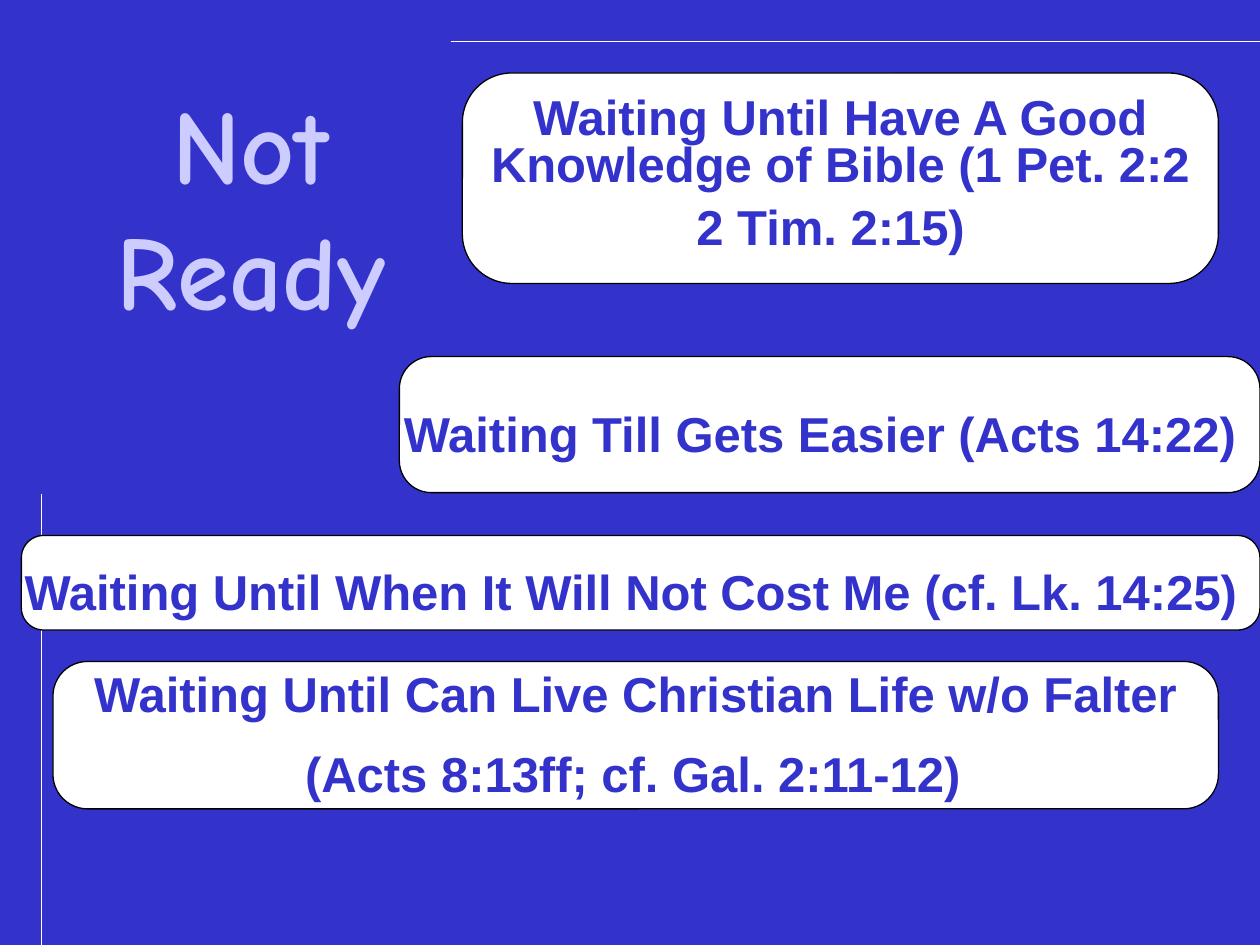
from dataclasses import dataclass

import pptx
import pptx.dml.color
import pptx.enum.shapes
import pptx.enum.text
import pptx.oxml.ns
import pptx.util
from lxml import etree

Inches = pptx.util.Inches


@dataclass(frozen=True)
class Theme:
    background: str = "3333CC"
    panel: str = "FFFFFF"
    outline: str = "000000"
    title: str = "CCCCFF"
    title_font: str = "Comic Neue"
    body_font: str = "Arial"
    title_size: int = 60
    body_size: int = 28
    tail_size: int = 40
    line_width: float = 0.75
    corner: float = 0.235


def color(value):
    return pptx.dml.color.RGBColor.from_string(value)


def add_span(para, text, *, size, font, fill):
    span = para.add_run()
    span.text = text
    span.font.size = pptx.util.Pt(size)
    span.font.name = font
    span.font.bold = True
    span.font.color.rgb = color(fill)


class SlideBuilder:
    def __init__(self, deck, theme):
        self.theme = theme
        self.page = deck.slides.add_slide(deck.slide_layouts[6])
        fill = self.page.background.fill
        fill.solid()
        fill.fore_color.rgb = color(theme.background)

    def style_line(self, line, value):
        line.color.rgb = color(value)
        line.width = pptx.util.Pt(self.theme.line_width)

    def rule(self, x1, y1, x2, y2):
        line = self.page.shapes.add_connector(
            pptx.enum.shapes.MSO_CONNECTOR.STRAIGHT,
            Inches(x1), Inches(y1), Inches(x2), Inches(y2))
        self.style_line(line.line, self.theme.panel)
        properties = line._element.spPr
        etree.SubElement(properties, pptx.oxml.ns.qn("a:effectLst"))

    def add_lines(self, box, lines, spacing=None, **style):
        frame = box.text_frame
        frame.word_wrap = False
        for index, text in enumerate(lines):
            para = frame.add_paragraph() if index else frame.paragraphs[0]
            para.alignment = pptx.enum.text.PP_ALIGN.CENTER
            if spacing:
                para.line_spacing = spacing
            add_span(para, text, **style)
        return para

    def title(self, left, top, width, height, lines):
        theme = self.theme
        box = self.page.shapes.add_textbox(
            Inches(left), Inches(top), Inches(width), Inches(height))
        self.add_lines(box, lines, size=theme.title_size,
                       font=theme.title_font, fill=theme.title)
        box.text_frame.auto_size = pptx.enum.text.MSO_AUTO_SIZE.SHAPE_TO_FIT_TEXT

    def panel(self, left, top, width, height, lines, spacing=None):
        theme = self.theme
        box = self.page.shapes.add_shape(
            pptx.enum.shapes.MSO_SHAPE.ROUNDED_RECTANGLE,
            Inches(left), Inches(top), Inches(width), Inches(height))
        box.adjustments[0] = theme.corner
        box.shadow.inherit = False
        box.fill.solid()
        box.fill.fore_color.rgb = color(theme.panel)
        self.style_line(box.line, theme.outline)
        box.text_frame.vertical_anchor = pptx.enum.text.MSO_ANCHOR.MIDDLE
        style = dict(font=theme.body_font, fill=theme.background)
        para = self.add_lines(box, lines, spacing, size=theme.body_size, **style)
        # The larger closing space sets the height of the last line
        add_span(para, " ", size=theme.tail_size, **style)


def main():
    deck = pptx.Presentation()
    deck.slide_width, deck.slide_height = Inches(10), Inches(7.5)
    slide = SlideBuilder(deck, Theme())

    # Edge rules
    slide.rule(0.33, 3.92, 0.33, 7.5)
    slide.rule(3.58, 0.33, 10, 0.33)

    # Title and reasons for waiting
    slide.panel(3.67, 0.58, 6, 1.67, [
        "Waiting Until Have A Good",
        "Knowledge of Bible (1 Pet. 2:2",
        "2 Tim. 2:15)"], spacing=0.8)
    slide.title(0.67, 0.58, 2.64, 2.12, ["Not", "Ready"])
    slide.panel(3.17, 2.83, 6.83, 1.08,
                ["Waiting Till Gets Easier (Acts 14:22)"])
    slide.panel(0.17, 4.25, 9.83, 0.75,
                ["Waiting Until When It Will Not Cost Me (cf. Lk. 14:25)"])
    slide.panel(0.42, 5.25, 9.25, 1.17, [
        "Waiting Until Can Live Christian Life w/o Falter",
        " (Acts 8:13ff; cf. Gal. 2:11-12)"])

    deck.save("out.pptx")


if __name__ == "__main__":
    main()
